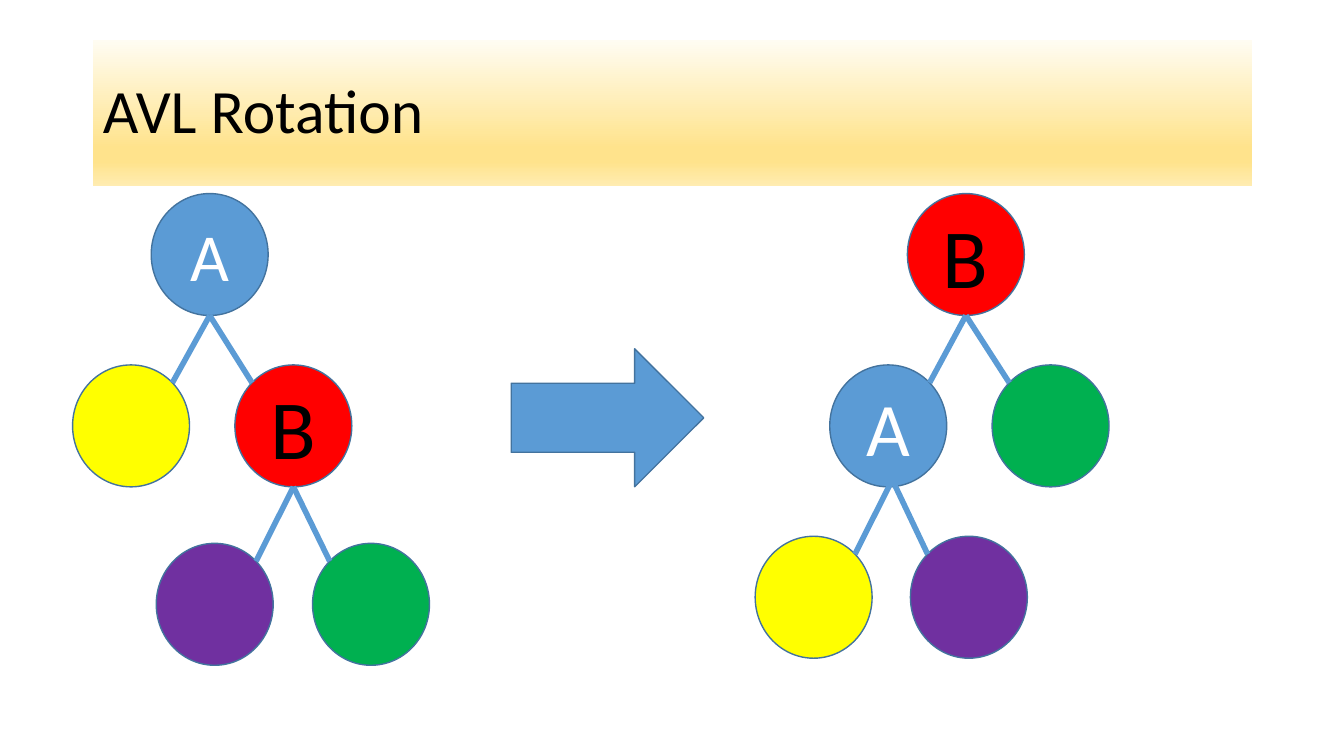
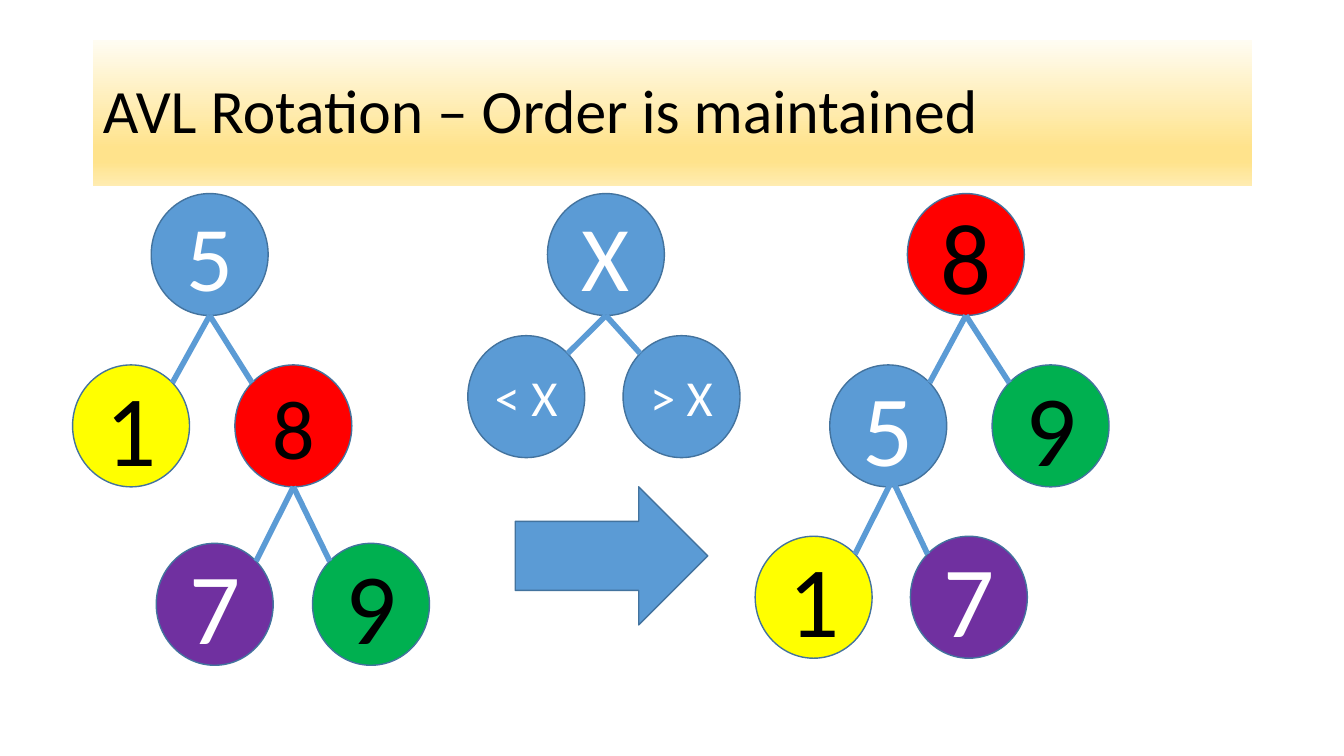
from copy import deepcopy
from dataclasses import dataclass
from math import sqrt

from lxml import etree
from pptx import Presentation
from pptx.dml.color import RGBColor
from pptx.enum import shapes, text
from pptx.oxml import ns
from pptx.util import Inches, Pt


@dataclass(frozen=True)
class Theme:
    font: str = "Calibri"
    black: str = "000000"
    white: str = "FFFFFF"
    blue: str = "5B9BD5"
    rim: str = "43739E"
    red: str = "FF0000"
    yellow: str = "FFFF00"
    purple: str = "7030A0"
    green: str = "00B050"
    band: tuple = ((0, "FFFCF2"), (74, "FFE38C"), (83, "FFE38C"), (100, "FFECB2"))
    head: int = 44
    small: int = 36
    mid: int = 48
    large: int = 54
    big: int = 60
    wide: int = 66
    huge: int = 72
    thin: float = 1
    thick: float = 4


THEME = Theme()
NODE_W, NODE_H = 1.16, 1.21
INSET = (1 - sqrt(0.5)) / 2

LEFT = [(1.5, 1.92), (0.72, 3.62), (2.33, 3.62), (1.55, 5.39), (3.1, 5.39)]
LEFT_EDGES = [(0, 1), (0, 2), (2, 3), (2, 4)]
RIGHT = [(9, 1.92), (8.23, 3.62), (9.84, 3.62), (7.49, 5.32), (9.03, 5.32)]
RIGHT_EDGES = [(0, 1), (0, 2), (1, 3), (1, 4)]
RIGHT_FORKS = {1: (8.85, 4.76)}
RULE = [(5.43, 1.92), (4.64, 3.33), (6.18, 3.33)]
RULE_EDGES = [(0, 1), (0, 2)]


def rgb(color):
    return RGBColor.from_string(color)


class Deck:
    def __init__(self, theme):
        self.theme = theme
        self.show = Presentation()
        self.show.slide_width = Inches(13.33)
        self.show.slide_height = Inches(7.5)
        self.slide = None

    def page(self, words):
        self.slide = self.show.slides.add_slide(self.show.slide_layouts[5])
        title = self.slide.shapes.title
        title.left, title.top = Inches(0.92), Inches(0.4)
        title.width, title.height = Inches(11.5), Inches(1.45)
        self.shade(title)
        self.label(title, words, self.theme.head, self.theme.black, text.PP_ALIGN.LEFT)
        title.text_frame.paragraphs[0].line_spacing = 0.9

    def shade(self, shape):
        shape.fill.gradient()
        shape.fill.gradient_angle = 270
        group = shape.element.find(".//" + ns.qn("a:gsLst"))
        for _ in range(len(self.theme.band) - len(group)):
            group.append(deepcopy(group[0]))
        for stop, (place, color) in zip(shape.fill.gradient_stops, self.theme.band):
            stop.position = place / 100
            stop.color.rgb = rgb(color)

    def label(self, shape, words, size, color, align=text.PP_ALIGN.CENTER):
        frame = shape.text_frame
        frame.text = words
        frame.word_wrap = True
        frame.vertical_anchor = text.MSO_ANCHOR.MIDDLE
        para = frame.paragraphs[0]
        para.alignment = align
        para.font.name = self.theme.font
        para.font.size = Pt(size)
        para.font.color.rgb = rgb(color)

    def form(self, kind, left, top, width, height, color):
        shape = self.slide.shapes.add_shape(
            kind, Inches(left), Inches(top), Inches(width), Inches(height))
        shape.shadow.inherit = False
        shape.fill.solid()
        shape.fill.fore_color.rgb = rgb(color)
        shape.line.color.rgb = rgb(self.theme.rim)
        shape.line.width = Pt(self.theme.thin)
        return shape

    def node(self, spot, color, words="", size=THEME.huge):
        shape = self.form(shapes.MSO_SHAPE.OVAL, *spot, NODE_W, NODE_H, color)
        if words:
            dark = color in (self.theme.blue, self.theme.purple)
            ink = self.theme.white if dark else self.theme.black
            self.label(shape, words, size, ink)
            shape.text_frame.margin_left = shape.text_frame.margin_right = 0

    def edge(self, start, end):
        line = self.slide.shapes.add_connector(
            shapes.MSO_CONNECTOR.STRAIGHT, *map(Inches, (*start, *end)))
        line.line.color.rgb = rgb(self.theme.blue)
        line.line.width = Pt(self.theme.thick)
        etree.SubElement(line.element.spPr, ns.qn("a:effectLst"))

    def tree(self, spots, edges, nodes, forks=None):
        for spot, node in zip(spots, nodes):
            self.node(spot, *node)
        for upper, lower in edges:
            left, top = spots[upper]
            fork = (left + NODE_W / 2, top + NODE_H)
            fork = (forks or {}).get(upper, fork)
            x, y = spots[lower]
            side = INSET if x > left else 1 - INSET
            self.edge(fork, (x + NODE_W * side, y + NODE_H * INSET))

    def swap(self, before, after):
        self.tree(LEFT, LEFT_EDGES, before)
        self.tree(RIGHT, RIGHT_EDGES, after, RIGHT_FORKS)

    def arrow(self, left, top):
        self.form(shapes.MSO_SHAPE.RIGHT_ARROW, left, top, 1.91, 1.37, self.theme.blue)


def main():
    t = THEME
    deck = Deck(t)

    deck.page("AVL Rotation")
    deck.swap(
        [(t.blue, "A", t.mid), (t.yellow,), (t.red, "B", t.big), (t.purple,), (t.green,)],
        [(t.red, "B", t.big), (t.blue, "A", t.large), (t.green,), (t.yellow,), (t.purple,)])
    deck.arrow(5.07, 3.46)

    deck.page("AVL Rotation – Order is maintained")
    one, seven, nine = (t.yellow, "1"), (t.purple, "7"), (t.green, "9")
    deck.swap(
        [(t.blue, "5", t.wide), one, (t.red, "8", t.big), seven, nine],
        [(t.red, "8"), (t.blue, "5"), nine, one, seven])
    deck.arrow(5.11, 4.83)
    deck.tree(RULE, RULE_EDGES, [
        (t.blue, "X", t.wide), (t.blue, "< X", t.small), (t.blue, "> X", t.small)])

    deck.show.save("out.pptx")


if __name__ == "__main__":
    main()
